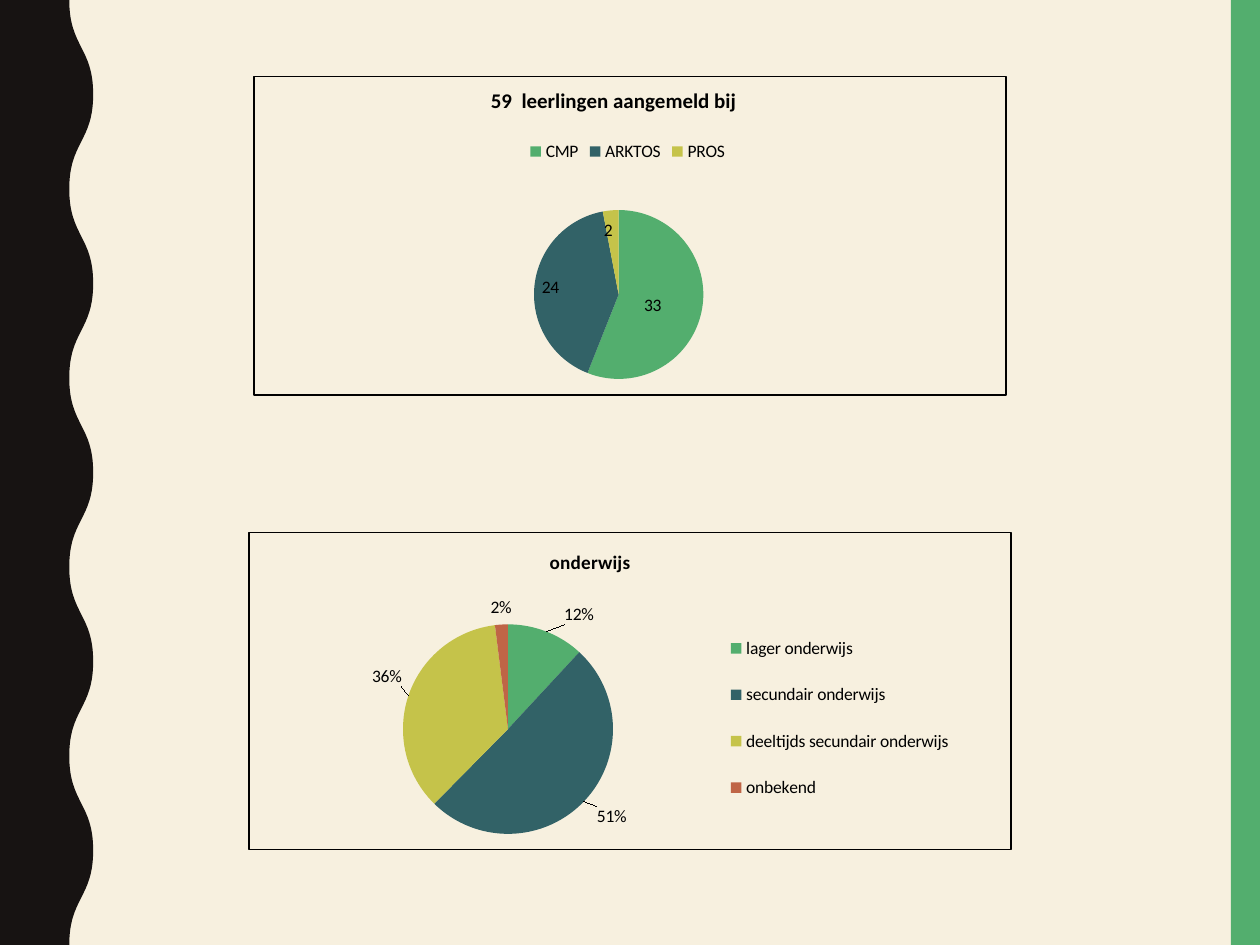
from lxml.etree import SubElement
from pptx import Presentation
from pptx.chart.data import CategoryChartData
from pptx.dml.color import RGBColor
from pptx.enum.chart import XL_CHART_TYPE, XL_LABEL_POSITION, XL_LEGEND_POSITION
from pptx.enum.shapes import MSO_SHAPE
from pptx.oxml import parse_xml
from pptx.oxml.ns import nsdecls, qn
from pptx.util import Inches, Pt

CREAM = RGBColor(0xF7, 0xF0, 0xDF)
DARK = RGBColor(0x17, 0x13, 0x12)
BLACK = RGBColor(0x00, 0x00, 0x00)
GREEN = RGBColor(0x53, 0xAE, 0x6E)
TEAL = RGBColor(0x32, 0x62, 0x67)
OLIVE = RGBColor(0xC5, 0xC3, 0x4A)
RUST = RGBColor(0xBF, 0x65, 0x46)
SLICES = [GREEN, TEAL, OLIVE, RUST]
FONT = "Calibri"

CENTER = XL_LABEL_POSITION.CENTER
INSIDE = XL_LABEL_POSITION.INSIDE_END
BEST_FIT = XL_LABEL_POSITION.BEST_FIT


def set_text(tf, text, size=10, bold=False, color=BLACK):
    r = tf.paragraphs[0].add_run()
    r.text = text
    r.font.name, r.font.size, r.font.bold = FONT, Pt(size), bold
    r.font.color.rgb = color


def set_layout(element, edge=True, inner=False, **fractions):
    """Place a chart part by fractions of the chart area; edge=False gives an offset."""
    for old in element.findall(qn("c:layout")):
        element.remove(old)
    layout = parse_xml(f"<c:layout {nsdecls('c')}/>")
    manual = SubElement(layout, qn("c:manualLayout"))
    if inner:
        SubElement(manual, qn("c:layoutTarget")).set("val", "inner")
    if edge:
        for key in ("x", "y"):
            SubElement(manual, qn(f"c:{key}Mode")).set("val", "edge")
    for key, value in fractions.items():
        SubElement(manual, qn(f"c:{key}")).set("val", str(value))
    for tag in ("c:idx", "c:legendPos", "c:tx"):
        before = element.find(qn(tag))
        if before is not None:
            before.addnext(layout)
            return
    element.insert(0, layout)


prs = Presentation()
prs.slide_width, prs.slide_height = Inches(10), Inches(7.5)
s = prs.slides.add_slide(prs.slide_layouts[6])
s.background.fill.solid()
s.background.fill.fore_color.rgb = CREAM

# Wavy left edge: S-curves of equal height between a trough and a crest
TROUGH, CREST, HALF_WAVE, TURNS = 0.55, 0.74, 0.75, 10
turns = [(Inches(CREST if i % 2 else TROUGH), Inches(i * HALF_WAVE))
         for i in range(TURNS + 1)]
builder = s.shapes.build_freeform(*turns[0])
builder.add_line_segments(turns[1:] + [(0, Inches(7.5)), (0, 0)], close=True)
wave = builder.convert_to_shape()
segments = list(wave.element.iter(qn("a:lnTo")))[:TURNS]
for line, (x0, y0), (x1, y1) in zip(segments, turns, turns[1:]):
    middle = (y0 + y1) // 2
    curve = parse_xml(f"<a:cubicBezTo {nsdecls('a')}/>")
    for x, y in ((x0, middle), (x1, middle), (x1, y1)):
        pt = SubElement(curve, qn("a:pt"))
        pt.set("x", str(x))
        pt.set("y", str(y))
    line.getparent().replace(line, curve)

bar = s.shapes.add_shape(
    MSO_SHAPE.RECTANGLE, Inches(9.77), 0, Inches(0.23), Inches(7.5))
for sp, color in ((wave, DARK), (bar, GREEN)):
    sp.shadow.inherit = False
    sp.fill.solid()
    sp.fill.fore_color.rgb = color
    sp.line.fill.background()

pies = [
    dict(title="59  leerlingen aangemeld bij", size=12, at=(2.01, 0.6, 5.98, 2.54),
         data={"CMP": 56, "ARKTOS": 41, "PROS": 3}, counts=["33", "24", "2"],
         labels=[CENTER, INSIDE, INSIDE], legend=XL_LEGEND_POSITION.TOP,
         offsets=[(-0.01, 0.01), (0, -0.03), (-0.01, 0.01)],
         title_at=dict(x=0.31, y=0.02), plot_at=dict(x=0.37, y=0.42, w=0.23, h=0.53),
         legend_at=dict(x=0.36, y=0.19)),
    dict(title="onderwijs", size=11, at=(1.97, 4.22, 6.06, 2.53),
         data={"lager onderwijs": 12, "secundair onderwijs": 51,
               "deeltijds secundair onderwijs": 36, "onbekend": 2}, counts=[],
         labels=[BEST_FIT] * 4, legend=XL_LEGEND_POSITION.RIGHT,
         offsets=[(0.02, 0), (0.01, 0), (0, -0.02), (0, 0)],
         title_at=dict(x=0.39, y=0.04), plot_at=dict(x=0.2, y=0.29, w=0.28, h=0.66),
         legend_at=dict(x=0.6, y=0.25, w=0.35, h=0.67)),
]
for pie in pies:
    data = CategoryChartData(number_format='0"%"')
    data.categories = list(pie["data"])
    data.add_series("Series 1", list(pie["data"].values()))
    chart = s.shapes.add_chart(
        XL_CHART_TYPE.PIE, *map(Inches, pie["at"]), data).chart
    chart.font.name, chart.font.size = FONT, Pt(10)
    chart.font.color.rgb = BLACK

    chart.has_title = True
    set_text(chart.chart_title.text_frame, pie["title"], size=pie["size"], bold=True)
    chart.has_legend = True
    chart.legend.position = pie["legend"]
    chart.legend.include_in_layout = False

    plot = chart.plots[0]
    plot.vary_by_categories = True
    for i, position in enumerate(pie["labels"]):
        point = plot.series[0].points[i]
        point.format.fill.solid()
        point.format.fill.fore_color.rgb = SLICES[i]
        point.format.line.fill.background()
        if pie["counts"]:
            set_text(point.data_label.text_frame, pie["counts"][i])
        point.data_label.position = position
    for label, (x, y) in zip(chart.element.iter(qn("c:dLbl")), pie["offsets"]):
        if x or y:
            set_layout(label, edge=False, x=x, y=y)

    area = chart.element.find(qn("c:chart"))
    set_layout(area.find(qn("c:title")), **pie["title_at"])
    set_layout(area.find(qn("c:plotArea")), inner=True, **pie["plot_at"])
    set_layout(area.find(qn("c:legend")), **pie["legend_at"])
    area.addprevious(parse_xml(f'<c:roundedCorners {nsdecls("c")} val="0"/>'))
    area.addnext(parse_xml(
        f'<c:spPr {nsdecls("c", "a")}><a:noFill/><a:ln w="{Pt(0.75)}"><a:solidFill>'
        f'<a:srgbClr val="{BLACK}"/></a:solidFill></a:ln></c:spPr>'))

prs.save("out.pptx")
